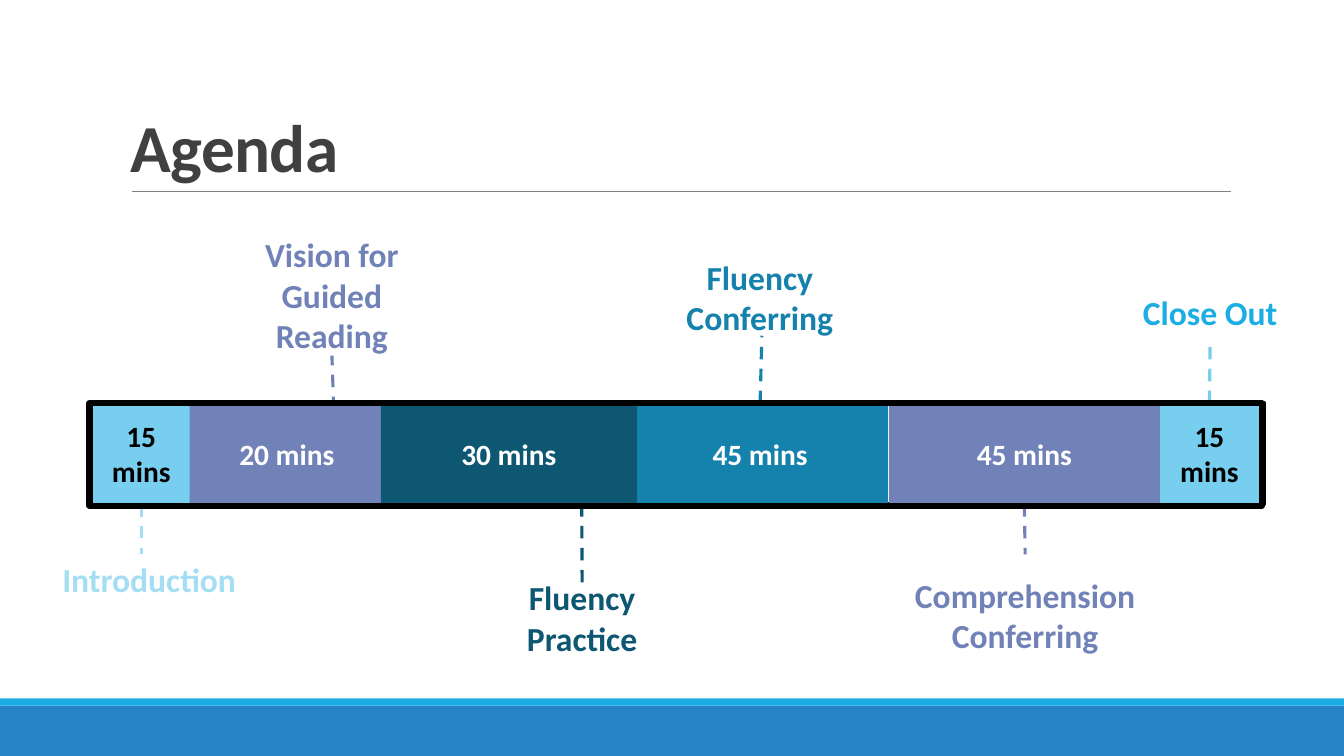
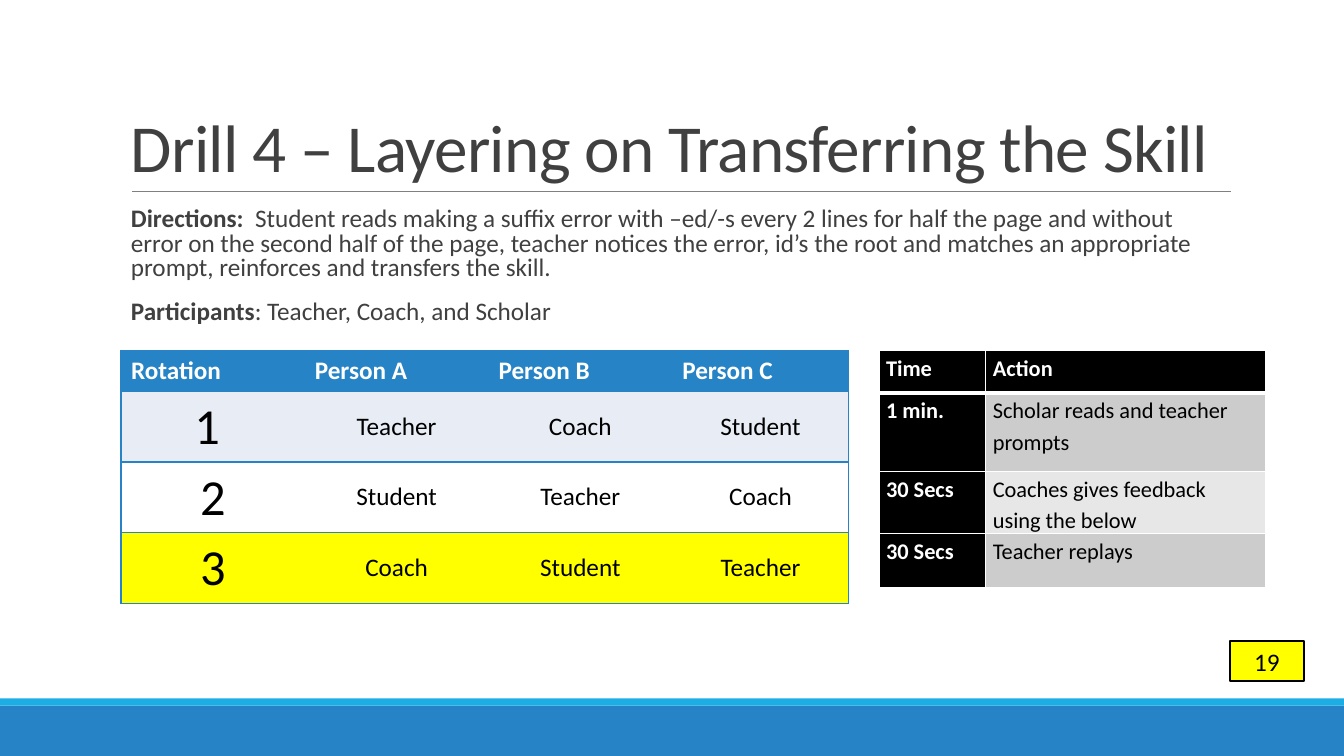
from dataclasses import dataclass
from math import dist
from typing import Any

from lxml.etree import SubElement
from pptx import Presentation
from pptx.dml.color import RGBColor as RGB
from pptx.enum.dml import MSO_LINE as Dash
from pptx.enum.shapes import MSO_CONNECTOR as Conn, MSO_SHAPE as Form
from pptx.enum.text import MSO_ANCHOR as Anchor, PP_ALIGN as Align
from pptx.oxml import parse_xml
from pptx.oxml.ns import nsdecls, qn
from pptx.util import Cm, Pt

Box = tuple[float, float, float, float]  # left, top, width, height in cm
Point = tuple[float, float]


@dataclass(frozen=True)
class Theme:
    font: str = "Calibri"
    blue: str = "2683C6"
    bright: str = "1CADE4"
    sky: str = "77CEEF"
    pale: str = "A4DEF4"
    teal: str = "1482AC"
    deep: str = "0E5772"
    mauve: str = "7182B8"
    ink: str = "404040"
    rule: str = "808080"
    black: str = "000000"
    white: str = "FFFFFF"
    yellow: str = "FFFF00"
    tint: str = "E8EDF5"
    gray: str = "CCCCCC"
    mist: str = "E7E7E7"
    title: int = 48
    digit: int = 36
    label: int = 24
    time: int = 21
    body: int = 18
    small: int = 16


T = Theme()


@dataclass(frozen=True)
class Block:
    """One block of time in the agenda bar."""
    left: float
    width: float
    text: str
    fill: str
    color: str = T.white


@dataclass(frozen=True)
class Label:
    """A caption with the dashed line that leads to its block."""
    text: str
    box: Box
    color: str
    block: int
    start: Point
    end: Point
    line: str
    align: Any = Align.CENTER


@dataclass(frozen=True)
class Run:
    text: str
    bold: bool = False


@dataclass(frozen=True)
class Cell:
    text: str
    fill: str
    size: int
    color: str = T.black
    bold: bool = False
    align: Any = Align.LEFT
    anchor: Any = Anchor.TOP


# Basic tools
def style(item: Any, fmt: dict[str, Any]) -> None:
    for name, value in fmt.items():
        setattr(item, name, value)


def write(frame: Any, paras: list[list[Run]], size: int, color: str,
          para: dict[str, Any], spacing: int = 0) -> None:
    for i, runs in enumerate(paras):
        p = frame.add_paragraph() if i else frame.paragraphs[0]
        style(p, para)
        for item in runs:
            run = p.add_run()
            run.text = item.text
            style(run.font, {"name": T.font, "size": Pt(size), "bold": item.bold})
            run.font.color.rgb = RGB.from_string(color)
            if spacing:
                run.font._element.set("spc", str(spacing))


def add_text(slide: Any, box: Box, paras: list[list[Run]], size: int, color: str,
             para: dict[str, Any], frame: dict[str, Any], spacing: int = 0) -> Any:
    shape = slide.shapes.add_textbox(*map(Cm, box))
    style(shape.text_frame, {"word_wrap": True} | frame)
    write(shape.text_frame, paras, size, color, para, spacing)
    return shape


def add_rect(slide: Any, box: Box, fill: str = "", line: str = "", width: float = 0) -> Any:
    shape = slide.shapes.add_shape(Form.RECTANGLE, *map(Cm, box))
    shape.shadow.inherit = False
    if fill:
        shape.fill.solid()
        shape.fill.fore_color.rgb = RGB.from_string(fill)
    else:
        shape.fill.background()
    if line:
        shape.line.color.rgb = RGB.from_string(line)
        shape.line.width = Pt(width)
    else:
        shape.line.fill.background()
    return shape


def add_line(slide: Any, start: Point, end: Point, color: str, width: float,
             dash: Any = None) -> Any:
    line = slide.shapes.add_connector(Conn.STRAIGHT, *map(Cm, start + end))
    line.line.color.rgb = RGB.from_string(color)
    style(line.line, {"width": Pt(width), "dash_style": dash})
    SubElement(line._element.spPr, qn("a:effectLst"))
    return line


def site(shape: Any, point: Point) -> int | None:
    """Side whose middle lies at the point, if any."""
    x, y, w, h = shape.left, shape.top, shape.width, shape.height
    mids = [(x + w / 2, y), (x, y + h / 2), (x + w / 2, y + h), (x + w, y + h / 2)]
    spot = tuple(map(Cm, point))
    return next((i for i, mid in enumerate(mids) if dist(mid, spot) < Cm(0.1)), None)


# Shared slide base: bands, rule and title
def add_base(deck: Any, title: str, bold: bool = False) -> Any:
    slide = deck.slides.add_slide(deck.slide_layouts[6])
    add_rect(slide, (0, 17.78, 33.87, 1.27), T.blue)
    add_rect(slide, (0, 17.6, 33.87, 0.18), T.bright)
    add_line(slide, (3.33, 4.83), (31.01, 4.83), T.rule, 0.5)
    add_text(slide, (3.05, 0.79, 27.94, 4.04), [[Run(title, bold)]], T.title, T.ink,
             {"line_spacing": 0.85}, {"vertical_anchor": Anchor.BOTTOM}, -50)
    return slide


# Agenda
TOP, HIGH = 10.16, 2.54
BLOCKS = [
    Block(2.29, 2.54, "15 mins", T.sky, T.black),
    Block(4.78, 4.9, "20 mins", T.mauve),
    Block(29.21, 2.54, "15 mins", T.sky, T.black),
    Block(15.93, 6.45, "45 mins", T.teal),
    Block(9.6, 6.45, "30 mins", T.deep),
    Block(22.4, 6.83, "45 mins", T.mauve),
]
LABELS = [
    Label("Introduction", (1.32, 13.74, 5.03, 1.7), T.pale, 0,
          (3.56, 12.7), (3.56, 13.97), T.pale, Align.LEFT),
    Label("Close Out", (28.27, 7.01, 4.45, 1.7), T.bright, 2,
          (30.48, 10.16), (30.48, 8.71), T.sky),
    Label("Vision for Guided Reading", (5.66, 5.89, 5.41, 3.07), T.mauve, 1,
          (8.41, 10.31), (8.38, 8.9), T.mauve),
    Label("Fluency Conferring", (16.51, 6.63, 5.28, 1.7), T.teal, 3,
          (19.15, 10.16), (19.2, 8.46), T.teal),
    Label("Fluency Practice", (11.81, 14.71, 5.72, 1.7), T.deep, 4,
          (14.66, 12.7), (14.66, 14.71), T.deep),
    Label("Comprehension Conferring", (22.05, 13.97, 7.57, 3.07), T.mauve, 5,
          (25.83, 12.7), (25.83, 13.97), T.mauve),
]


def add_label(slide: Any, item: Label, bar: Any) -> None:
    line = add_line(slide, item.start, item.end, item.line, 2.25, Dash.DASH)
    text = add_text(slide, item.box, [[Run(item.text, True)]], T.label, item.color,
                    {"alignment": item.align}, {"vertical_anchor": Anchor.MIDDLE})
    for join, shape, point in ((line.begin_connect, bar, item.start),
                               (line.end_connect, text, item.end)):
        side = site(shape, point)
        if side is not None:
            join(shape, side)


def add_agenda(deck: Any) -> None:
    slide = add_base(deck, "Agenda", True)
    add_rect(slide, (2.24, TOP, 29.62, HIGH), line=T.black, width=3)
    bars = []
    for block in BLOCKS:
        bar = add_rect(slide, (block.left, TOP, block.width, HIGH), block.fill)
        style(bar.text_frame, {"word_wrap": True, "vertical_anchor": Anchor.MIDDLE})
        write(bar.text_frame, [[Run(block.text, True)]], T.time, block.color,
              {"alignment": Align.CENTER})
        bars.append(bar)
    for item in LABELS:
        add_label(slide, item, bars[item.block])
    add_rect(slide, (2.26, TOP, 29.54, 2.59), line=T.black, width=4.5)


# Tables
def set_edges(cell: Any, color: str, widths: dict[str, float]) -> None:
    for i, side in enumerate("LRTB"):
        width = widths[side]
        paint = f'<a:solidFill><a:srgbClr val="{color}"/></a:solidFill>' if width else "<a:noFill/>"
        cell._tc.get_or_add_tcPr().insert(i, parse_xml(
            f'<a:ln{side} {nsdecls("a")} w="{Pt(width)}">{paint}</a:ln{side}>'))


def add_grid(slide: Any, at: Point, cols: list[float], rows: list[float],
             cells: list[list[Cell]], edge: str, inner: float, head: float,
             para: dict[str, Any], pad: dict[str, Any]) -> None:
    size = (sum(cols), sum(rows))
    table = slide.shapes.add_table(len(rows), len(cols), *map(Cm, at + size)).table
    table.horz_banding = False
    for col, width in zip(table.columns, cols):
        col.width = Cm(width)
    for row, high in zip(table.rows, rows):
        row.height = Cm(high)
    for r, line in enumerate(cells):
        for c, item in enumerate(line):
            cell = table.cell(r, c)
            style(cell, {"vertical_anchor": item.anchor} | pad)
            cell.fill.solid()
            cell.fill.fore_color.rgb = RGB.from_string(item.fill)
            write(cell.text_frame, [[Run(item.text, item.bold)]], item.size, item.color,
                  {"alignment": item.align} | para)
            set_edges(cell, edge, {
                "L": inner if c else 1, "R": inner if c < len(cols) - 1 else 1,
                "T": head if r == 1 else 1, "B": head if r == 0 else 1})


# Drill
NOTES = [
    [Run("Directions:  ", True),
     Run("Student reads making a suffix error with –ed/-s every 2 lines for half the page "
         "and without error on the second half of the page, teacher notices the error, "
         "id’s the root and matches an appropriate prompt, reinforces and transfers the skill.")],
    [Run("Participants", True), Run(": Teacher, Coach, and Scholar")],
]
HEADS = ["Rotation", "Person A", "Person B", "Person C"]
TURNS = [
    (T.tint, ["1 ", "Teacher", "Coach", "Student"]),
    (T.white, ["2", "Student", "Teacher", "Coach"]),
    (T.yellow, ["3", "Coach", "Student", "Teacher"]),
]
STEPS = [
    ("Time", "Action", T.black),
    ("1 min.", "Scholar reads and teacher prompts", T.gray),
    ("30 Secs", "Coaches gives feedback using the below", T.mist),
    ("30 Secs", "Teacher replays", T.gray),
]


def add_drill(deck: Any) -> None:
    slide = add_base(deck, "Drill 4 – Layering on Transferring the Skill")
    add_text(slide, (3.05, 5.13, 27.94, 3.35), NOTES, T.body, T.ink,
             {"line_spacing": 0.8, "space_before": Pt(12), "space_after": Pt(2)},
             {"margin_left": Cm(0.25), "margin_right": 0})

    page = add_rect(slide, (30.99, 16.15, 1.88, 1.02), T.yellow, T.black, 1.25)
    write(page.text_frame, [[Run("19")]], T.body, T.black, {"alignment": Align.CENTER})

    turns = [[Cell(text, T.blue, T.body, T.white, True) for text in HEADS]]
    turns += [[Cell(text, fill, T.body if c else T.digit, align=Align.CENTER,
                    anchor=Anchor.MIDDLE) for c, text in enumerate(row)]
              for fill, row in TURNS]
    add_grid(slide, (3.05, 8.84), [4.63] * 3 + [4.45], [1.02] + [1.78] * 3, turns,
             T.blue, 0, 1, {}, {})

    steps = [[Cell(time, T.black, T.small, T.white, True),
              Cell(act, fill, T.small, T.black if r else T.white, r == 0)]
             for r, (time, act, fill) in enumerate(STEPS)]
    add_grid(slide, (22.15, 8.84), [2.69, 7.06], [1.07, 1.98, 1.55, 1.35], steps,
             T.white, 1, 3, {"line_spacing": 1.15},
             {"margin_left": Cm(0.18), "margin_right": Cm(0.18),
              "margin_top": 0, "margin_bottom": 0})


def main() -> None:
    deck = Presentation()
    style(deck, {"slide_width": Cm(33.87), "slide_height": Cm(19.05)})
    add_agenda(deck)
    add_drill(deck)
    deck.save("out.pptx")


if __name__ == "__main__":
    main()
